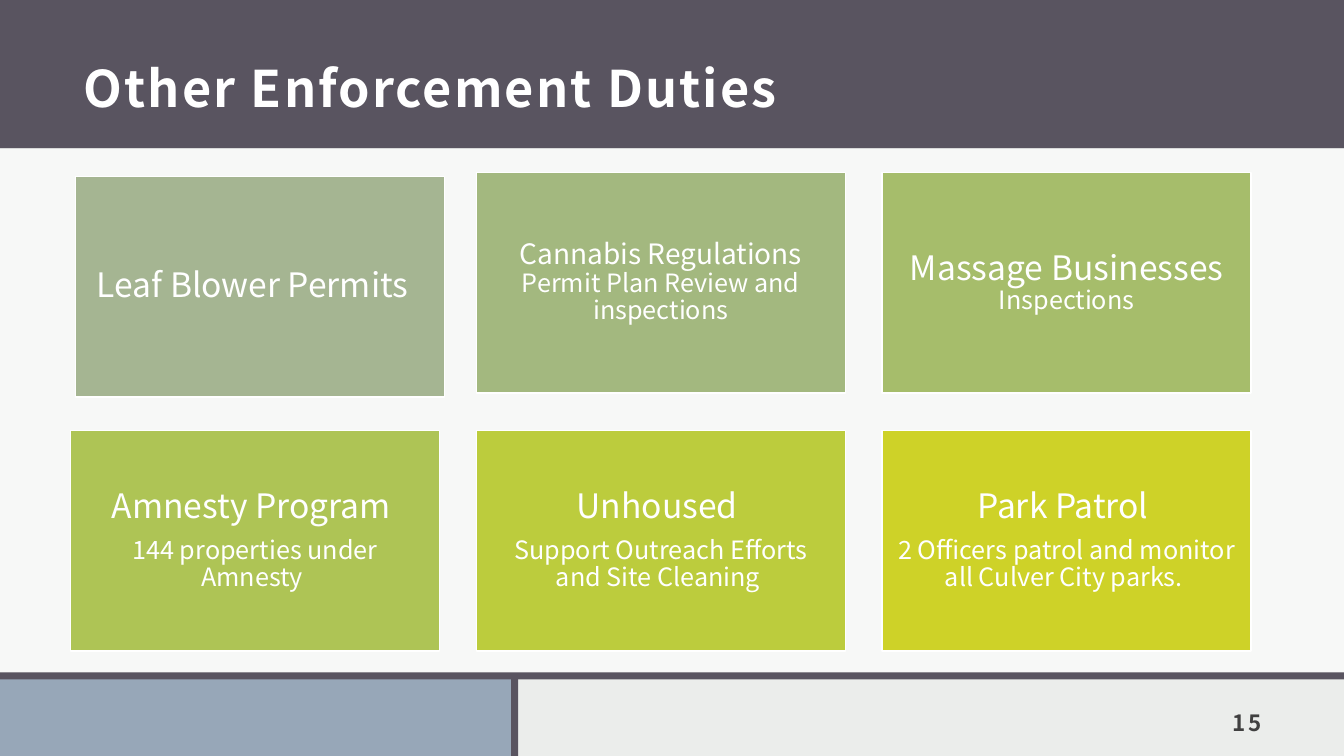
import pptx
import pptx.dml.color
import pptx.enum.shapes
import pptx.enum.text
import pptx.util

Inches = pptx.util.Inches
Pt = pptx.util.Pt
RGBColor = pptx.dml.color.RGBColor
PP_ALIGN = pptx.enum.text.PP_ALIGN
MSO_ANCHOR = pptx.enum.text.MSO_ANCHOR

FONT = "Noto Sans CJK JP"
WHITE = RGBColor(0xFF, 0xFF, 0xFF)
PLUM = RGBColor(0x59, 0x54, 0x60)
BLUE = RGBColor(0x97, 0xA7, 0xB8)
PALE = RGBColor(0xEB, 0xED, 0xEB)
PANEL = RGBColor(0xF7, 0xF8, 0xF7)
DARK = RGBColor(0x40, 0x40, 0x40)
WIDTH, HEIGHT = 13.33, 7.5

presentation = pptx.Presentation()
presentation.slide_width = Inches(WIDTH)
presentation.slide_height = Inches(HEIGHT)
slide = presentation.slides.add_slide(presentation.slide_layouts[5])
slide.background.fill.solid()
slide.background.fill.fore_color.rgb = PALE


def add_rectangle(left, top, width, height, color):
    shape = slide.shapes.add_shape(
        pptx.enum.shapes.MSO_SHAPE.RECTANGLE,
        Inches(left), Inches(top), Inches(width), Inches(height))
    shape.shadow.inherit = False
    shape.fill.solid()
    shape.fill.fore_color.rgb = color
    shape.line.fill.background()
    return shape


def write_text(shape, paragraphs, color=WHITE, bold=False, tracking=0,
               align=PP_ALIGN.CENTER, anchor=MSO_ANCHOR.MIDDLE,
               line_spacing=0.9, space_share=0, margins=(0.1, 0.1, 0.1, 0.1)):
    """Each paragraph is a list of (text, size) runs; a newline breaks the line."""
    frame = shape.text_frame
    frame.word_wrap = True
    frame.auto_size = pptx.enum.text.MSO_AUTO_SIZE.NONE
    frame.vertical_anchor = anchor
    (frame.margin_left, frame.margin_top,
     frame.margin_right, frame.margin_bottom) = map(Inches, margins)
    for index, runs in enumerate(paragraphs):
        paragraph = frame.add_paragraph() if index else frame.paragraphs[0]
        paragraph.alignment = align
        paragraph.line_spacing = line_spacing
        paragraph.space_before = Pt(0)
        paragraph.space_after = Pt(space_share * runs[0][1])
        for text, size in runs:
            for part, line in enumerate(text.split("\n")):
                if part:
                    paragraph.add_line_break()
                run = paragraph.add_run()
                run.text = line
                run.font.name = FONT
                run.font.size = Pt(size)
                run.font.bold = bold
                run.font.color.rgb = color
                if tracking:
                    run.font._element.set("spc", str(int(tracking * 100)))


# Header, content panel and footer bands
add_rectangle(0, 0, WIDTH, 1.47, PLUM)
add_rectangle(0, 1.48, WIDTH, 5.19, PANEL)
add_rectangle(0, 6.68, 5.09, 0.82, BLUE)
add_rectangle(0, 6.67, WIDTH, 0.07, PLUM)
add_rectangle(5.07, 6.69, 0.07, 0.81, PLUM)

# Title, raised above the header band
title = slide.shapes.title
title.left, title.top, title.width, title.height = map(Inches, (0.71, 0.2, 11.92, 1.02))
slide.shapes._spTree.append(title._element)
write_text(title, [[("Other Enforcement Duties", 36)]], bold=True, tracking=1.5,
           align=PP_ALIGN.LEFT, line_spacing=1.5, margins=(0.12, 0.12, 0.12, 0.1))

# Slide number
number = slide.shapes.add_textbox(Inches(11.56), Inches(6.9), Inches(1.07), Inches(0.5))
write_text(number, [[("15", 16)]], color=DARK, bold=True, tracking=1.5,
           align=PP_ALIGN.RIGHT, anchor=MSO_ANCHOR.BOTTOM, line_spacing=1.0,
           margins=(0.12, 0.12, 0.12, 0.1))

# Duty cards: three columns by two rows, the first one slightly offset
COLUMNS = 3
GRID_LEFT, GRID_TOP = 0.7, 1.71
COLUMN_STEP, ROW_STEP = 4.025, 2.56
CARD_WIDTH, CARD_HEIGHT = 3.66, 2.19
FIRST_OFFSET = (0.05, 0.04)
cards = [
    (RGBColor(0xA5, 0xB5, 0x92), [[("Leaf Blower Permits  ", 24)]]),
    (RGBColor(0xA3, 0xB8, 0x7F), [[("Cannabis Regulations ", 20),
                                   ("Permit Plan Review and inspections", 18)]]),
    (RGBColor(0xA6, 0xBD, 0x6B), [[("Massage Businesses ", 24), ("Inspections", 18)]]),
    (RGBColor(0xAE, 0xC4, 0x55), [[("Amnesty Program ", 24)],
                                  [("144 properties under Amnesty ", 18)]]),
    (RGBColor(0xBC, 0xCC, 0x3D), [[("Unhoused ", 24)],
                                  [("Support Outreach Efforts\nand Site Cleaning ", 18)]]),
    (RGBColor(0xCE, 0xD2, 0x28), [[("Park Patrol ", 24)],
                                  [("2 Officers patrol and monitor all Culver City parks. ", 18)]]),
]
for index, (color, paragraphs) in enumerate(cards):
    row, column = divmod(index, COLUMNS)
    offset_x, offset_y = (0, 0) if index else FIRST_OFFSET
    card = add_rectangle(GRID_LEFT + column * COLUMN_STEP + offset_x,
                         GRID_TOP + row * ROW_STEP + offset_y,
                         CARD_WIDTH, CARD_HEIGHT, color)
    card.line.color.rgb = WHITE
    card.line.width = Pt(1)
    write_text(card, paragraphs, space_share=0.35)

presentation.save("out.pptx")
